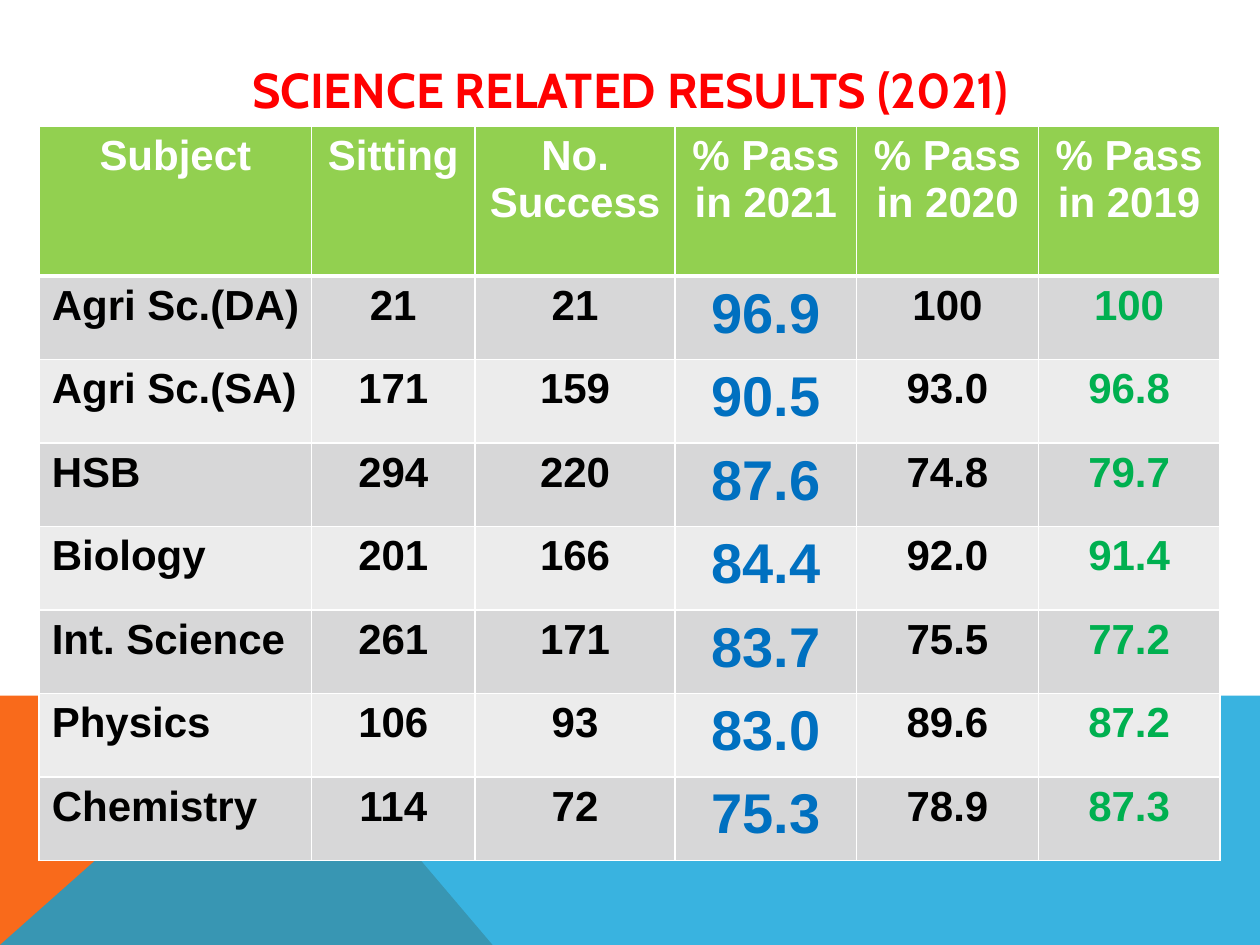
import pptx
import pptx.dml.color
import pptx.enum.text
import pptx.oxml
import pptx.oxml.ns
import pptx.util
from lxml import etree

Pt = pptx.util.Pt
ALIGN = pptx.enum.text.PP_ALIGN
SLIDE_WIDTH, SLIDE_HEIGHT = 720, 540

HEADINGS = ["Subject", "Sitting", "No. Success",
            "% Pass in 2021", "% Pass in 2020", "% Pass in 2019"]
RESULTS = [
    ["Agri Sc.(DA)", "21", "21", "96.9", "100", "100"],
    ["Agri Sc.(SA)", "171", "159", "90.5", "93.0", "96.8"],
    ["HSB", "294", "220", "87.6", "74.8", "79.7"],
    ["Biology", "201", "166", "84.4", "92.0", "91.4"],
    ["Int. Science", "261", "171", "83.7", "75.5", "77.2"],
    ["Physics", "106", "93", "83.0", "89.6", "87.2"],
    ["Chemistry", "114", "72", "75.3", "78.9", "87.3"],
]
COLUMN_WIDTHS = [155.6, 93.5, 114.3, 103.8, 103.8, 103.8]
HEADER_HEIGHT = 85.7
BODY_COLORS = ["000000", "000000", "000000", "0070C0", "000000", "00B050"]
BODY_SIZES = [24, 24, 24, 32, 24, 24]
BAND_FILLS = ["D7D7D8", "ECECEC"]


def color(value):
    return pptx.dml.color.RGBColor.from_string(value)


def set_fill(target, value):
    target.fill.solid()
    target.fill.fore_color.rgb = color(value)


def write_text(text_frame, text, alignment, text_color, **font_values):
    paragraph = text_frame.paragraphs[0]
    paragraph.alignment = alignment
    run = paragraph.add_run()
    run.text = text
    run.font.color.rgb = color(text_color)
    for name, value in font_values.items():
        setattr(run.font, name, value)


def set_borders(cell, widths):
    """Draw white cell borders; widths are left, right, top, bottom in points."""
    properties = cell._tc.get_or_add_tcPr()
    for index, (side, width) in enumerate(zip("LRTB", widths)):
        line = pptx.oxml.parse_xml(
            f'<a:ln{side} {pptx.oxml.ns.nsdecls("a")} w="{Pt(width)}">'
            '<a:solidFill><a:srgbClr val="FFFFFF"/></a:solidFill>'
            f'</a:ln{side}>')
        properties.insert(index, line)


def add_polygon(slide, points, fill):
    builder = slide.shapes.build_freeform(
        Pt(points[0][0]), Pt(points[0][1]), scale=1.0)
    builder.add_line_segments([(Pt(x), Pt(y)) for x, y in points[1:]], close=True)
    shape = builder.convert_to_shape()
    shape.shadow.inherit = False
    set_fill(shape, fill)
    shape.line.fill.background()
    return shape


def add_footer_bands(slide, left, top, width, height):
    right, bottom = left + width, top + height
    peak = left + 160.5
    # Orange wedge
    add_polygon(slide, [(left, bottom), (left, top), (peak, top),
                        (left + 281.5, bottom)], "F96A1B")
    # Translucent blue band
    blue = add_polygon(slide, [(left, bottom), (peak, top), (right, top),
                               (right, bottom)], "08A1D9")
    rgb = blue.fill._xPr.find(".//" + pptx.oxml.ns.qn("a:srgbClr"))
    etree.SubElement(rgb, pptx.oxml.ns.qn("a:alpha"), val="80000")


def add_title(slide, left, top, width, height):
    box = slide.shapes.add_textbox(Pt(left), Pt(top), Pt(width), Pt(height))
    frame_values = {"word_wrap": True,
                    "vertical_anchor": pptx.enum.text.MSO_ANCHOR.MIDDLE}
    for name, value in frame_values.items():
        setattr(box.text_frame, name, value)
    write_text(box.text_frame, "SCIENCE RELATED RESULTS (2021)", ALIGN.CENTER,
               "FF0000", name="Cabin", size=Pt(28), bold=True)


def add_results_table(slide, left, top, width, height):
    rows = [HEADINGS] + RESULTS
    table = slide.shapes.add_table(len(rows), len(HEADINGS), Pt(left), Pt(top),
                                   Pt(width), Pt(height)).table
    for column, column_width in zip(table.columns, COLUMN_WIDTHS):
        column.width = Pt(column_width)
    body_height = (height - HEADER_HEIGHT) / len(RESULTS)
    for row_index, values in enumerate(rows):
        header = row_index == 0
        table.rows[row_index].height = Pt(HEADER_HEIGHT if header else body_height)
        fill = "92D050" if header else BAND_FILLS[(row_index - 1) % 2]
        borders = [1, 1, 3 if row_index == 1 else 1, 3 if header else 1]
        for column_index, value in enumerate(values):
            cell = table.cell(row_index, column_index)
            set_fill(cell, fill)
            set_borders(cell, borders)
            centered = header or column_index > 0
            if not centered:
                # Keep the longest subject on one line
                cell.margin_right = Pt(4)
            write_text(cell.text_frame, value,
                       ALIGN.CENTER if centered else ALIGN.LEFT,
                       "FFFFFF" if header else BODY_COLORS[column_index],
                       name="Arial", bold=True,
                       size=Pt(24 if header else BODY_SIZES[column_index]))


def main():
    presentation = pptx.Presentation()
    presentation.slide_width = Pt(SLIDE_WIDTH)
    presentation.slide_height = Pt(SLIDE_HEIGHT)
    slide = presentation.slides.add_slide(presentation.slide_layouts[6])
    add_footer_bands(slide, 0, 397.5, SLIDE_WIDTH, 142.5)
    add_title(slide, 67.5, 12, 585, 78)
    add_results_table(slide, 22.4, 72, sum(COLUMN_WIDTHS), 419.8)
    presentation.save("out.pptx")


if __name__ == "__main__":
    main()
